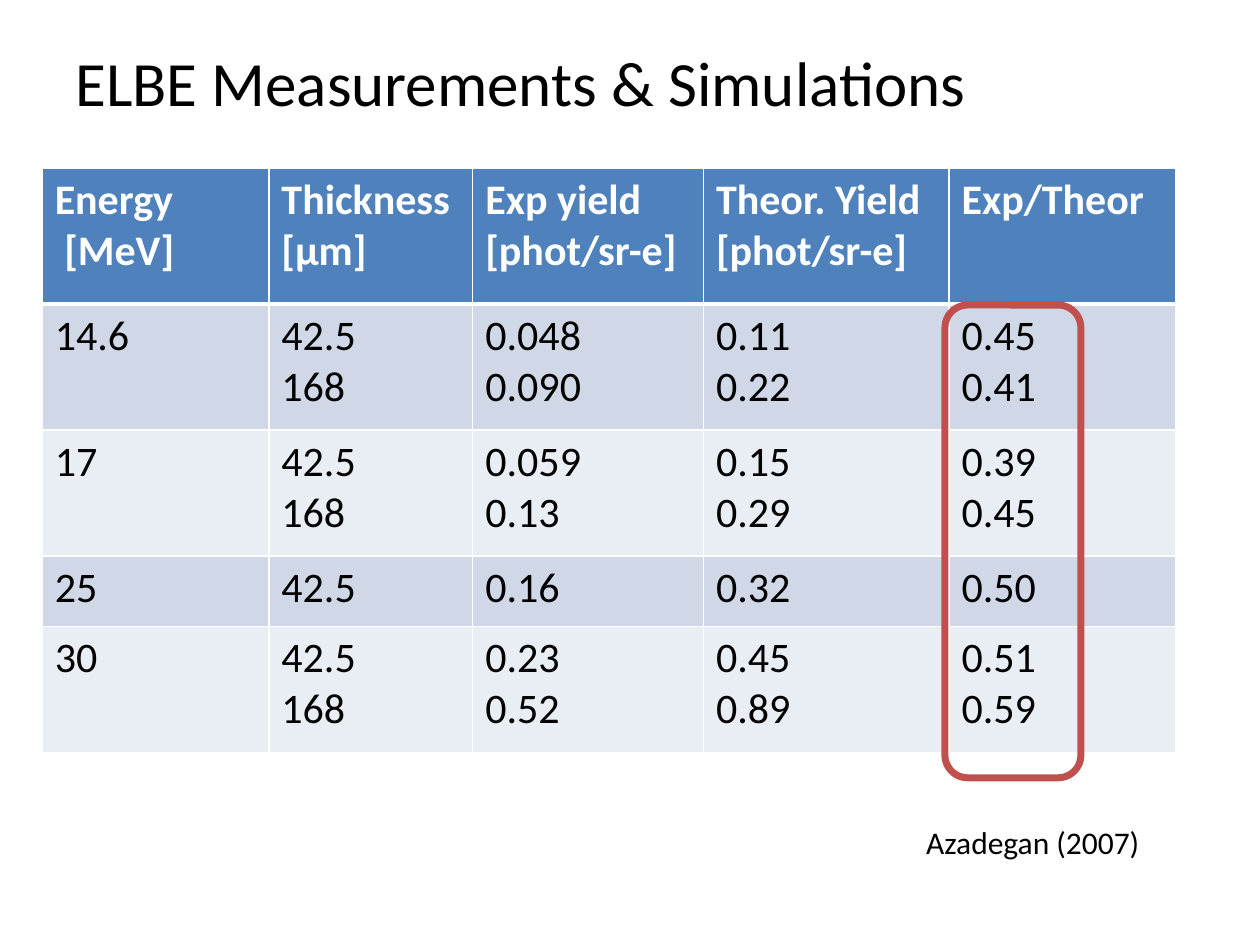
"""Build the slide comparing measured and simulated ELBE photon yields."""
from dataclasses import dataclass

from lxml.etree import SubElement
from pptx import Presentation
from pptx.dml.color import RGBColor as Rgb
from pptx.enum.shapes import MSO_SHAPE as Shape
from pptx.enum.text import MSO_ANCHOR as Anchor, MSO_AUTO_SIZE as AutoSize
from pptx.oxml.ns import qn
from pptx.util import Cm, Pt


@dataclass(frozen=True)
class Theme:
    font: str = "Calibri"
    black: str = "000000"
    white: str = "FFFFFF"
    header: str = "4F81BD"
    bands: tuple = ("E9EDF4", "D0D8E8")
    accent: str = "C0504D"
    title_size: int = 36
    table_size: int = 24
    source_size: int = 18


theme = Theme()


def write(frame, lines, size, color, bold=False):
    for index, line in enumerate(lines):
        para = frame.add_paragraph() if index else frame.paragraphs[0]
        span = para.add_run()
        span.text = line
        span.font.name = theme.font
        span.font.size = Pt(size)
        span.font.bold = bold
        span.font.color.rgb = Rgb.from_string(color)


def add_border(cell, side, width):
    line = SubElement(cell._tc.get_or_add_tcPr(), qn(f"a:ln{side}"), w=str(Pt(width)))
    fill = SubElement(line, qn("a:solidFill"))
    SubElement(fill, qn("a:srgbClr"), val=theme.white)


deck = Presentation()
deck.slide_width, deck.slide_height = Cm(25.4), Cm(19.05)
page = deck.slides.add_slide(deck.slide_layouts[6])

title = page.shapes.add_textbox(Cm(1.27), Cm(0.43), Cm(22.86), Cm(2.41)).text_frame
title.word_wrap = True
title.vertical_anchor = Anchor.MIDDLE
write(title, ["ELBE Measurements & Simulations"], theme.title_size, theme.black)

rows = [
    ["Energy\n [MeV]", "Thickness\n[μm]", "Exp yield\n[phot/sr-e]", "Theor. Yield\n[phot/sr-e]", "Exp/Theor"],
    ["14.6", "42.5\n168", "0.048\n0.090", "0.11\n0.22", "0.45\n0.41"],
    ["17", "42.5\n168", "0.059\n0.13", "0.15\n0.29", "0.39\n0.45"],
    ["25", "42.5", "0.16", "0.32", "0.50"],
    ["30", "42.5\n168", "0.23\n0.52", "0.45\n0.89", "0.51\n0.59"],
]
widths = [4.57, 4.11, 4.65, 4.95, 4.57]
heights = [2.74, 2.54, 2.54, 1.42, 2.54]
table = page.shapes.add_table(
    len(rows), len(widths), Cm(0.85), Cm(3.39), Cm(sum(widths)), Cm(sum(heights))
).table
for column, width in zip(table.columns, widths):
    column.width = Cm(width)
for row_index, (row, height) in enumerate(zip(rows, heights)):
    table.rows[row_index].height = Cm(height)
    is_header = row_index == 0
    fill_color = theme.header if is_header else theme.bands[row_index % 2]
    text_color = theme.white if is_header else theme.black
    for column_index, text in enumerate(row):
        cell = table.cell(row_index, column_index)
        for side in "LRTB":
            under_header = (row_index, side) in [(0, "B"), (1, "T")]
            add_border(cell, side, 3 if under_header else 1)
        cell.fill.solid()
        cell.fill.fore_color.rgb = Rgb.from_string(fill_color)
        write(cell.text_frame, text.split("\n"), theme.table_size, text_color, is_header)

source = page.shapes.add_textbox(Cm(18.42), Cm(16.46), Cm(4.88), Cm(1.02)).text_frame
source.word_wrap = False
source.auto_size = AutoSize.SHAPE_TO_FIT_TEXT
write(source, ["Azadegan (2007)"], theme.source_size, theme.black)

highlight = page.shapes.add_shape(
    Shape.ROUNDED_RECTANGLE, Cm(19.05), Cm(6.15), Cm(2.74), Cm(9.53)
)
highlight.shadow.inherit = False
highlight.fill.background()
highlight.line.color.rgb = Rgb.from_string(theme.accent)
highlight.line.width = Pt(4)

deck.save("out.pptx")
